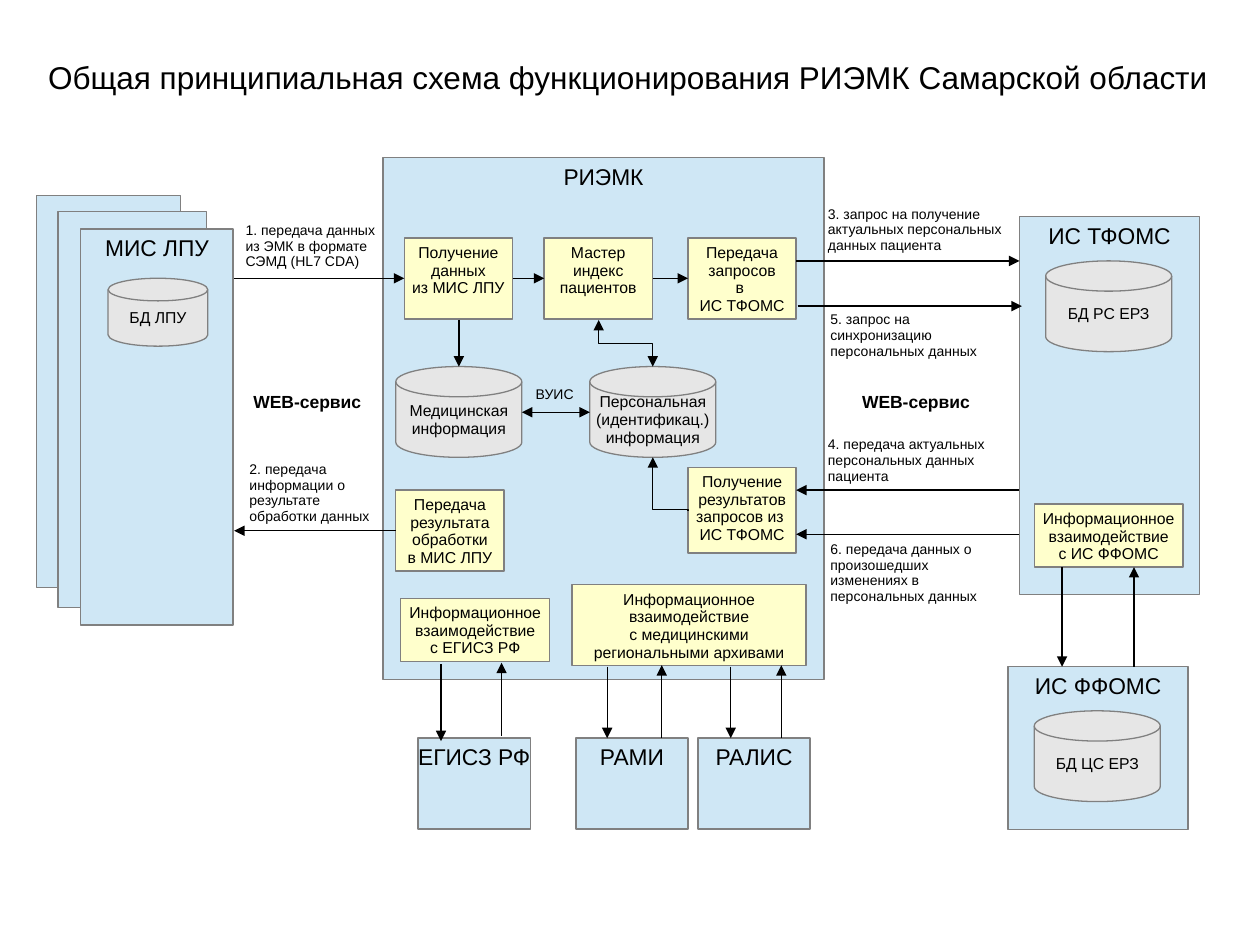
from lxml import etree
from pptx import Presentation
from pptx.dml.color import RGBColor
from pptx.enum.shapes import MSO_CONNECTOR, MSO_SHAPE
from pptx.enum.text import MSO_ANCHOR, PP_ALIGN
from pptx.oxml.ns import qn
from pptx.util import Cm, Pt

RECT = MSO_SHAPE.FLOWCHART_PROCESS
DISK = MSO_SHAPE.FLOWCHART_MAGNETIC_DISK
LINE, ELBOW = MSO_CONNECTOR.STRAIGHT, MSO_CONNECTOR.ELBOW
TOP, MIDDLE = MSO_ANCHOR.TOP, MSO_ANCHOR.MIDDLE
LEFT, CENTER = PP_ALIGN.LEFT, PP_ALIGN.CENTER
BLUE = RGBColor(0xCF, 0xE7, 0xF5)
YELLOW = RGBColor(0xFF, 0xFF, 0xCC)
SILVER = RGBColor(0xE6, 0xE6, 0xE6)
GRAY = RGBColor(0x80, 0x80, 0x80)
BLACK = RGBColor(0, 0, 0)

SYSTEMS = [
    ("", 0.74, 3.94, 2.9, 7.9),
    ("", 1.17, 4.27, 3, 7.98),
    ("МИС ЛПУ", 1.63, 4.62, 3.07, 7.98),
    ("РИЭМК", 7.72, 3.18, 8.89, 10.52),
    ("ИС ТФОМС", 20.55, 4.37, 3.63, 7.62),
    ("ИС ФФОМС", 20.32, 13.44, 3.63, 3.28),
    ("ЕГИСЗ РФ", 8.43, 14.88, 2.26, 1.83),
    ("РАМИ", 11.61, 14.88, 2.26, 1.83),
    ("РАЛИС", 14.07, 14.88, 2.26, 1.83),
]
TASKS = [
    ("Получение\nданных\nиз МИС ЛПУ", 8.15, 4.8, 2.18, 1.63),
    ("Мастер\nиндекс\nпациентов", 10.97, 4.8, 2.18, 1.63),
    ("Передача\nзапросов\nв \nИС ТФОМС", 13.87, 4.8, 2.18, 1.63),
    ("Передача\nрезультата\nобработки\nв МИС ЛПУ", 7.98, 9.88, 2.18, 1.63),
    ("Получение\nрезультатов\nзапросов из \nИС ТФОМС", 13.87, 9.42, 2.18, 1.73),
    ("Информационное\nвзаимодействие\nс медицинскими\nрегиональными архивами",
     11.53, 11.79, 4.72, 1.63),
    ("Информационное\nвзаимодействие\nс ЕГИСЗ РФ", 8.08, 12.06, 3, 1.27),
    ("Информационное\nвзаимодействие\nс ИС ФФОМС", 20.85, 10.16, 3, 1.27),
]
STORES = [
    ("БД ЛПУ", 2.18, 5.61, 2.01, 1.37),
    ("Медицинская\nинформация", 7.98, 7.39, 2.54, 1.83),
    ("Персональная\n(идентификац.)\nинформация", 11.89, 7.39, 2.54, 1.83),
    ("БД РС ЕРЗ", 21.08, 5.26, 2.54, 1.83),
    ("БД ЦС ЕРЗ", 20.85, 14.33, 2.54, 1.83),
]
ROWS = [
    (5.61, 4.72, 8.15), (5.61, 10.34, 10.97), (5.61, 13.16, 13.87),
    (5.26, 16.05, 20.55), (6.17, 16.08, 20.6), (9.88, 20.55, 16.05),
    (10.77, 20.55, 16.05), (10.7, 7.98, 4.72),
]
COLUMNS = [
    (9.25, 6.45, 7.39), (8.89, 13.39, 14.94), (10.11, 14.83, 13.36),
    (12.24, 13.44, 14.88), (13.34, 14.88, 13.41), (14.73, 13.44, 14.88),
    (15.75, 14.88, 13.41), (21.41, 11.43, 13.44), (22.86, 13.44, 11.43),
]
NOTES = [
    ("1. передача данных из ЭМК в формате СЭМД (HL7 CDA)", 4.72, 4.37, 3.2, 1.19),
    ("2. передача информации о результате обработки данных", 4.8, 9.19, 3.1, 1.5),
    ("3. запрос на получение актуальных персональных данных пациента",
     16.46, 4.04, 4.09, 1.19),
    ("4. передача актуальных персональных данных пациента", 16.46, 8.69, 4.09, 1.19),
    ("5. запрос на синхронизацию персональных данных", 16.51, 6.17, 4.09, 1.19),
    ("6. передача данных о произошедших изменениях в персональных данных",
     16.51, 10.8, 3.95, 1.5),
    ("ВУИС", 10.57, 7.67, 1.42, 0.76),
]


def write(shape, text, size=9, bold=False, align=LEFT, anchor=TOP, wrap=True):
    """Put formatted text into a shape, one paragraph a line."""
    frame = shape.text_frame
    frame.word_wrap = wrap
    frame.vertical_anchor = anchor
    frame.margin_left = frame.margin_right = Cm(0.23)
    frame.margin_top = Cm(0.15 if size > 10 else 0.13)
    frame.margin_bottom = Cm(0.1)
    frame.text = text
    for para in frame.paragraphs:
        para.alignment = align
        para.line_spacing = 0.93
        for run in para.runs:
            font = run.font
            font.name, font.size, font.bold = "Arial", Pt(size), bold
            font.color.rgb = BLACK


def box(slide, text, x, y, w, h, kind=RECT, fill=BLUE, size=13, anchor=TOP):
    """Draw an outlined block with centred text."""
    shape = slide.shapes.add_shape(kind, Cm(x), Cm(y), Cm(w), Cm(h))
    shape.shadow.inherit = False
    shape.fill.solid()
    shape.fill.fore_color.rgb = fill
    shape.line.color.rgb = GRAY
    shape.line.width = Pt(0.75)
    if text:
        write(shape, text, size=size, align=CENTER, anchor=anchor, wrap=False)


def label(slide, text, x, y, w, h, **style):
    """Add a free text label."""
    area = slide.shapes.add_textbox(Cm(x), Cm(y), Cm(w), Cm(h))
    write(area, text, **style)


def arrow(slide, start, end, kind=LINE, both=False):
    """Draw a black arrow and return it."""
    link = slide.shapes.add_connector(kind, *map(Cm, start + end))
    link.line.color.rgb = BLACK
    link.line.width = Pt(0.75)
    ends = ("headEnd", "tailEnd") if both else ("tailEnd",)
    for name in ends:
        etree.SubElement(link.line._ln, qn("a:" + name), type="triangle")
    etree.SubElement(link._element.spPr, qn("a:effectLst"))
    return link


def elbow(slide, start, end, bend, both=False):
    """Draw a bent arrow that leaves its start vertically."""
    mid_x, mid_y = (start[0] + end[0]) / 2, (start[1] + end[1]) / 2
    turned = [(mid_x - (y - mid_y), mid_y + (x - mid_x)) for x, y in (start, end)]
    link = arrow(slide, *turned, kind=ELBOW, both=both)
    props = link._element.spPr
    props.find(qn("a:xfrm")).set("rot", str(270 * 60000))
    guides = props.find(qn("a:prstGeom")).find(qn("a:avLst"))
    etree.SubElement(guides, qn("a:gd"), name="adj1", fmla=f"val {bend}")


def main():
    """Build the scheme and save it."""
    deck = Presentation()
    deck.slide_width, deck.slide_height = Cm(25.4), Cm(19.05)
    slide = deck.slides.add_slide(deck.slide_layouts[6])
    for item in SYSTEMS:
        box(slide, *item)
    for item in TASKS:
        box(slide, *item, fill=YELLOW, size=9)
    for item in STORES:
        box(slide, *item, kind=DISK, fill=SILVER, size=9, anchor=MIDDLE)
    for y, start, end in ROWS:
        arrow(slide, (start, y), (end, y))
    for x, start, end in COLUMNS:
        arrow(slide, (x, start), (x, end))
    arrow(slide, (10.52, 8.31), (11.89, 8.31), both=True)
    elbow(slide, (13.87, 10.29), (13.16, 9.22), 1400)
    elbow(slide, (12.07, 6.45), (13.16, 7.39), 50000, both=True)
    label(slide, "Общая принципиальная схема функционирования РИЭМК Самарской области",
          0.74, 1.09, 23.98, 0.86, size=18)
    for item in NOTES:
        label(slide, *item, size=8)
    for x in (4.88, 17.15):
        label(slide, "WEB-сервис", x, 7.8, 2.72, 0.76, size=10, bold=True)
    deck.save("out.pptx")


if __name__ == "__main__":
    main()
